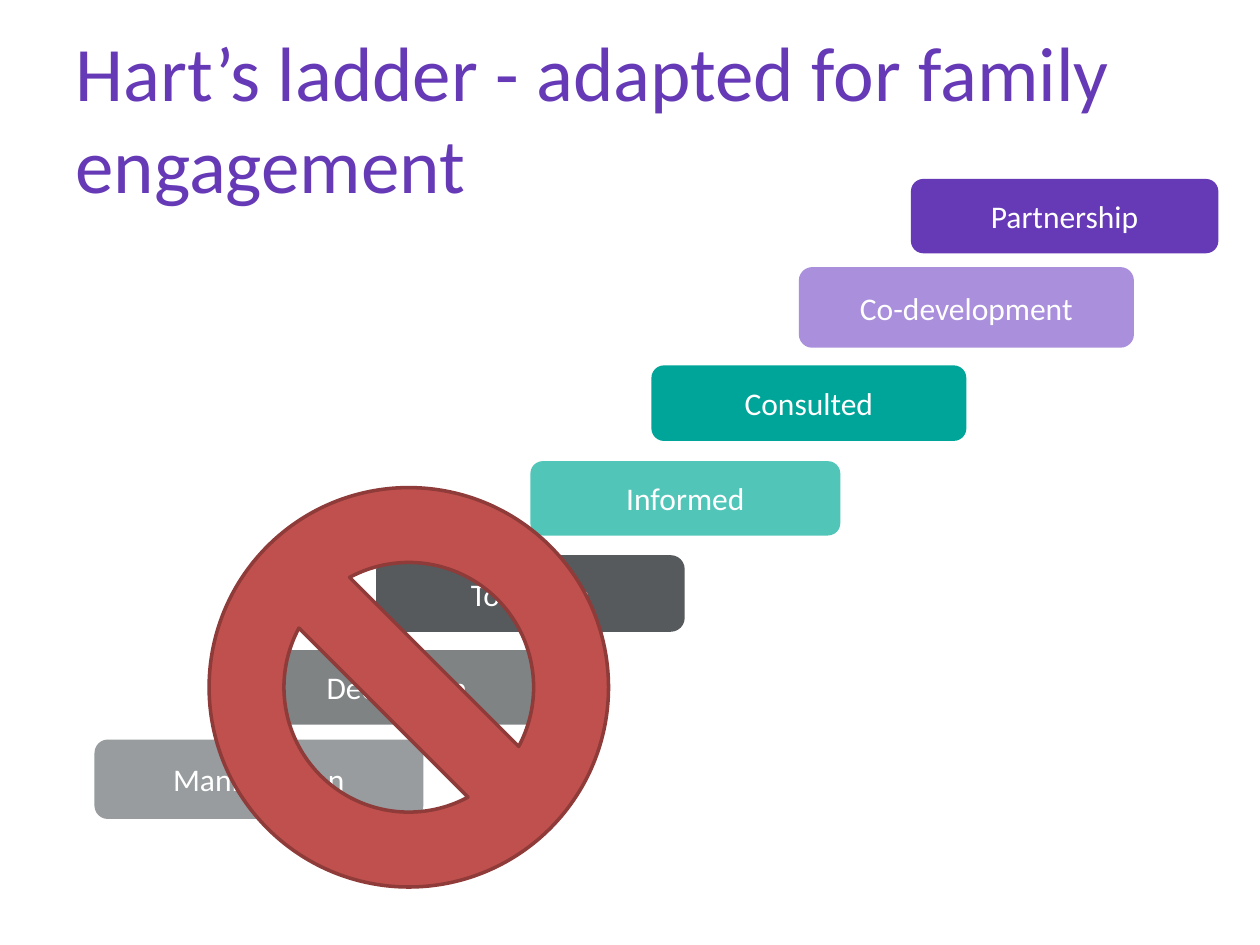
from typing import NamedTuple, Optional

from lxml import etree
from pptx import Presentation
from pptx.dml.color import RGBColor
from pptx.enum.shapes import MSO_SHAPE
from pptx.enum.text import MSO_ANCHOR, MSO_AUTO_SIZE, PP_ALIGN
from pptx.oxml.ns import qn
from pptx.util import Inches, Pt

ROUNDED = MSO_SHAPE.ROUNDED_RECTANGLE
NO_SYMBOL = MSO_SHAPE.NO_SYMBOL
MIDDLE = MSO_ANCHOR.MIDDLE
CENTER, LEFT = PP_ALIGN.CENTER, PP_ALIGN.LEFT
NO_AUTOFIT = MSO_AUTO_SIZE.NONE

FONT = "Calibri"
WHITE = RGBColor(0xFF, 0xFF, 0xFF)
PURPLE = RGBColor(0x66, 0x39, 0xB7)
LILAC = RGBColor(0xAA, 0x8F, 0xDC)
TEAL = RGBColor(0x00, 0xA5, 0x99)
LIGHT_TEAL = RGBColor(0x52, 0xC5, 0xB9)
DARK_GRAY = RGBColor(0x56, 0x5A, 0x5C)
LIGHT_GRAY = RGBColor(0x98, 0x9C, 0x9E)
RED = RGBColor(0xC0, 0x50, 0x4D)
DARK_RED = RGBColor(0x8E, 0x3B, 0x39)


class Box(NamedTuple):
    left: float
    top: float
    width: float
    height: float


class Rung(NamedTuple):
    label: str
    box: Box
    fill: RGBColor
    line: Optional[RGBColor] = None
    opacity: int = 100


# Ladder from the lowest rung to the highest
RUNGS = [
    Rung("Manipulation", Box(0.75, 5.87, 2.61, 0.63), LIGHT_GRAY),
    Rung("Decoration", Box(1.92, 5.16, 2.46, 0.59), DARK_GRAY, opacity=75),
    Rung("Tokenism", Box(3, 4.42, 2.42, 0.58), DARK_GRAY, line=DARK_GRAY),
    Rung("Informed", Box(4.21, 3.66, 2.46, 0.59), LIGHT_TEAL),
    Rung("Consulted", Box(5.17, 2.9, 2.5, 0.6), TEAL),
    Rung("Co-development", Box(6.34, 2.12, 2.66, 0.64), LILAC),
    Rung("Partnership", Box(7.23, 1.42, 2.44, 0.59), PURPLE),
]


def write_text(shape, text: str, *, size: int, color: RGBColor, align=CENTER) -> None:
    frame = shape.text_frame
    frame.word_wrap = True
    frame.auto_size = NO_AUTOFIT
    frame.vertical_anchor = MIDDLE
    paragraph = frame.paragraphs[0]
    paragraph.alignment = align
    run = paragraph.add_run()
    run.text = text
    run.font.name = FONT
    run.font.size = Pt(size)
    run.font.color.rgb = color


def add_shape(slide, kind, box: Box, fill: RGBColor, line: Optional[RGBColor] = None,
              opacity: int = 100):
    shape = slide.shapes.add_shape(kind, *map(Inches, box))
    shape.shadow.inherit = False
    shape.fill.solid()
    shape.fill.fore_color.rgb = fill
    if opacity < 100:
        color = shape.fill._xPr.find(qn("a:solidFill"))[0]
        etree.SubElement(color, qn("a:alpha"), val=str(opacity * 1000))
    if line is None:
        shape.line.fill.background()
    else:
        shape.line.color.rgb = line
        shape.line.width = Pt(2)
    return shape


def add_rung(slide, rung: Rung) -> None:
    shape = add_shape(slide, ROUNDED, rung.box, rung.fill, rung.line, rung.opacity)
    write_text(shape, rung.label, size=18, color=WHITE)


def main() -> None:
    presentation = Presentation()
    presentation.slide_width = Inches(10)
    presentation.slide_height = Inches(7.5)
    slide = presentation.slides.add_slide(presentation.slide_layouts[5])

    # Title
    title = slide.shapes.title
    title.left, title.top, title.width, title.height = map(Inches, (0.5, 0.3, 9.17, 1.25))
    write_text(title, "Hart’s ladder - adapted for family engagement",
               size=44, color=PURPLE, align=LEFT)

    # Ladder
    for rung in RUNGS:
        add_rung(slide, rung)

    # Prohibition sign over the lowest rungs
    add_shape(slide, NO_SYMBOL, Box(1.66, 3.87, 3.17, 3.17), RED, line=DARK_RED)

    presentation.save("out.pptx")


if __name__ == "__main__":
    main()
